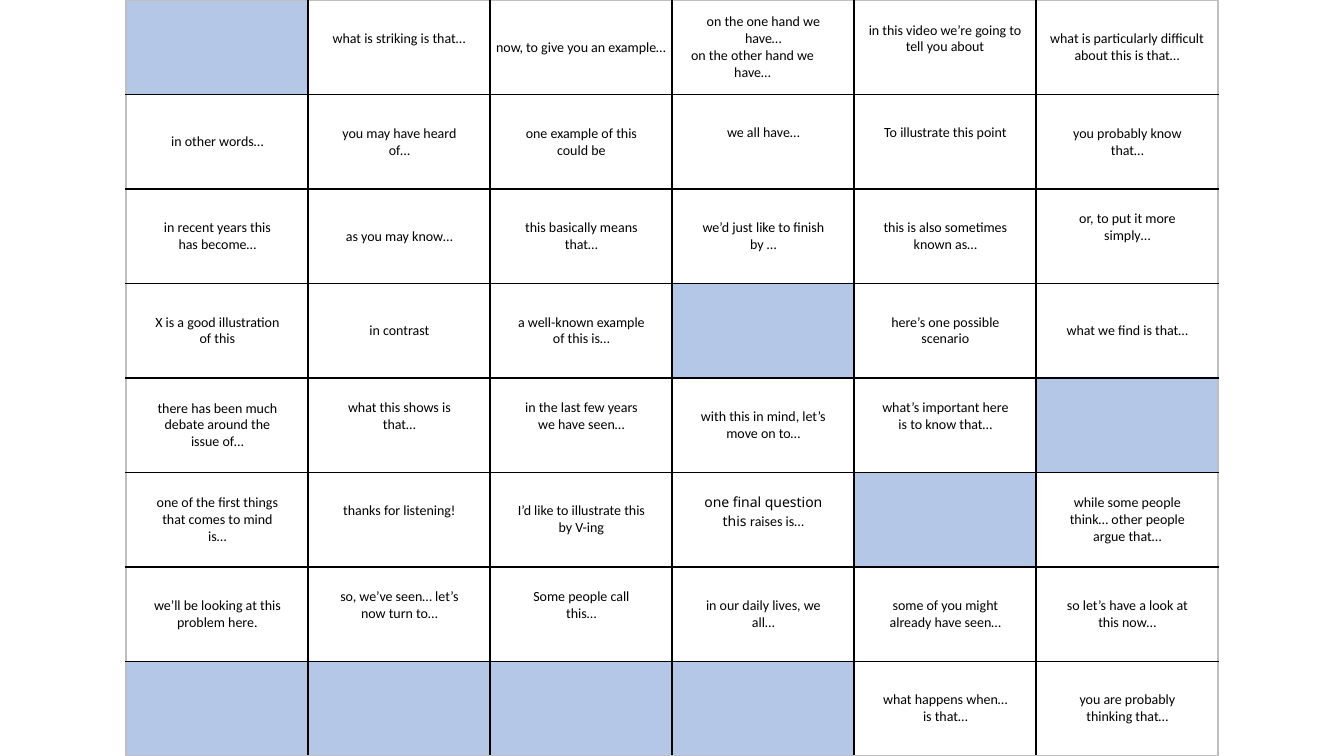
from lxml import etree
from pptx import Presentation
from pptx.dml.color import RGBColor
from pptx.enum import text
from pptx.oxml import ns
from pptx.util import Pt

COLORS = {"ink": "000000", "blocked": "B4C7E7", "frame": "BFBFBF"}
FONT, LEAD_FONT = "Calibri", "Noto Sans"

# None is a blocked square; a newline starts a new paragraph
PHRASES = [
    [None, "what is striking is that…", "now, to give you an example…",
     "on the one hand we have…\non the other hand we have…",
     "in this video we’re going to tell you about",
     "what is particularly difficult about this is that…"],
    ["in other words…", "you may have heard of…", "one example of this could be",
     "we all have…", "To illustrate this point", "you probably know that…"],
    ["in recent years this has become…", "as you may know…",
     "this basically means that…", "we’d just like to finish by …",
     "this is also sometimes known as…", "or, to put it more simply…"],
    ["X is a good illustration of this", "in contrast",
     "a well-known example of this is…", None,
     "here’s one possible scenario", "what we find is that…"],
    ["there has been much debate around the issue of…", "what this shows is that…",
     "in the last few years we have seen…", "with this in mind, let’s move on to…",
     "what’s important here is to know that…", None],
    ["one of the first things that comes to mind is…", "thanks for listening!",
     "I’d like to illustrate this by V-ing", "one final question this raises is…",
     None, "while some people think… other people argue that…"],
    ["we’ll be looking at this problem here.", "so, we’ve seen… let’s now turn to…",
     "Some people call this…", "in our daily lives, we all…",
     "some of you might already have seen…", "so let’s have a look at this now…"],
    [None, None, None, None, "what happens when…is that…",
     "you are probably thinking that…"],
]
LEAD = "one final question this "  # set in LEAD_FONT
RAISED = {(0, 1), (0, 4), (1, 3), (1, 4), (2, 5), (4, 1), (4, 2), (4, 4),
          (5, 1), (5, 3), (6, 1), (6, 2)}  # (row, column) sitting half a line higher

SLIDE_W, SLIDE_H = 960, 540
COL_W, ROW_H = 130, 67.5
SIZE, LINE_H, INSET = 10, 12.2, 4
INDENT_LEFT, INDENT_RIGHT = 15.5, 15
ROWS, COLS = len(PHRASES), len(PHRASES[0])


def add_run(paragraph, words, font_name):
    run = paragraph.add_run()
    run.text = words
    run.font.name = font_name
    run.font.size = Pt(SIZE)
    run.font.color.rgb = RGBColor.from_string(COLORS["ink"])


def indents(row, col, line):
    """The top row is unindented, apart from its two-paragraph phrase."""
    if row == 0 and col != 3:
        return 0, 0
    return (0 if line else INDENT_LEFT), INDENT_RIGHT


def write_phrase(cell, row, col):
    cell.vertical_anchor = text.MSO_ANCHOR.MIDDLE
    cell.margin_left = cell.margin_right = Pt(INSET)
    cell.margin_top = 0
    cell.margin_bottom = Pt(LINE_H if (row, col) in RAISED else 0)
    frame = cell.text_frame
    for line, words in enumerate(PHRASES[row][col].split("\n")):
        paragraph = frame.add_paragraph() if line else frame.paragraphs[0]
        paragraph.alignment = text.PP_ALIGN.CENTER
        properties = paragraph._p.get_or_add_pPr()
        for side, indent in zip(("marL", "marR"), indents(row, col, line)):
            properties.set(side, str(Pt(indent)))
        if words.startswith(LEAD):
            add_run(paragraph, LEAD, LEAD_FONT)
            words = words[len(LEAD):]
        add_run(paragraph, words, FONT)


def draw_borders(cell, row, col):
    """Black lines inside the grid, a grey frame around it."""
    outer = {"lnL": col == 0, "lnR": col == COLS - 1,
             "lnT": row == 0, "lnB": row == ROWS - 1}
    properties = cell._tc.get_or_add_tcPr()
    for position, (side, is_frame) in enumerate(outer.items()):
        line = etree.Element(ns.qn("a:" + side), w=str(Pt(1)))
        fill = etree.SubElement(line, ns.qn("a:solidFill"))
        etree.SubElement(fill, ns.qn("a:srgbClr"),
                         val=COLORS["frame" if is_frame else "ink"])
        properties.insert(position, line)


def main():
    prs = Presentation()
    prs.slide_width, prs.slide_height = Pt(SLIDE_W), Pt(SLIDE_H)
    slide = prs.slides.add_slide(prs.slide_layouts[6])
    width = COLS * COL_W
    grid = slide.shapes.add_table(ROWS, COLS, Pt((SLIDE_W - width) / 2), 0,
                                  Pt(width), Pt(ROWS * ROW_H)).table
    grid.first_row = grid.horz_banding = False
    for column in grid.columns:
        column.width = Pt(COL_W)
    for row, phrases in enumerate(PHRASES):
        grid.rows[row].height = Pt(ROW_H)
        for col, phrase in enumerate(phrases):
            cell = grid.cell(row, col)
            if phrase is None:
                cell.fill.solid()
                cell.fill.fore_color.rgb = RGBColor.from_string(COLORS["blocked"])
            else:
                cell.fill.background()
                write_phrase(cell, row, col)
            draw_borders(cell, row, col)
    prs.save("out.pptx")


if __name__ == "__main__":
    main()
